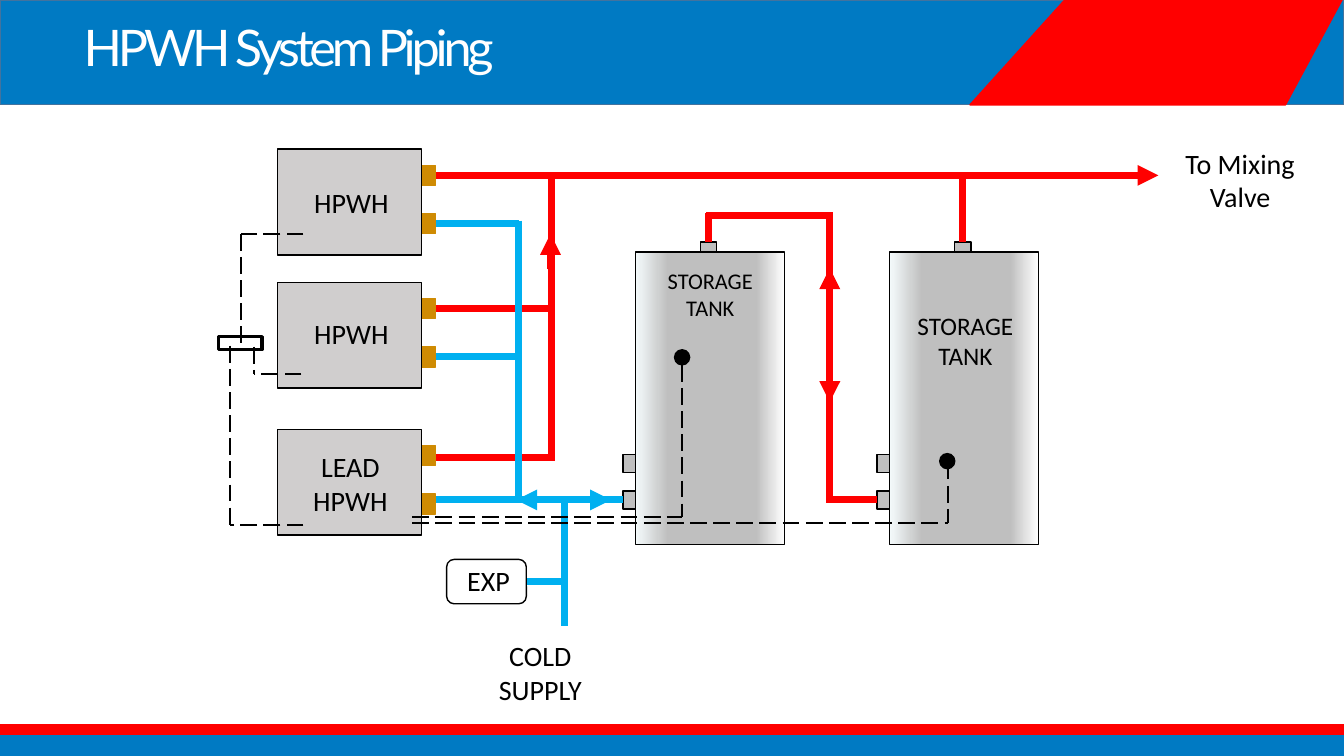
from lxml import etree
from pptx import Presentation
from pptx.dml.color import RGBColor
from pptx.enum.dml import MSO_LINE
from pptx.enum.shapes import MSO_CONNECTOR, MSO_SHAPE
from pptx.enum.text import MSO_ANCHOR, MSO_AUTO_SIZE, PP_ALIGN
from pptx.oxml.ns import qn
from pptx.util import Inches, Pt

RECT, ROUND, OVAL = MSO_SHAPE.RECTANGLE, MSO_SHAPE.ROUNDED_RECTANGLE, MSO_SHAPE.OVAL
STRAIGHT, LONG_DASH = MSO_CONNECTOR.STRAIGHT, MSO_LINE.LONG_DASH
LEFT, CENTER, TOP = PP_ALIGN.LEFT, PP_ALIGN.CENTER, MSO_ANCHOR.TOP
NO_FIT, GROW = MSO_AUTO_SIZE.NONE, MSO_AUTO_SIZE.SHAPE_TO_FIT_TEXT
SIDE_TOP, SIDE_LEFT, SIDE_RIGHT = 0, 1, 3

COLORS = {
    "blue": "007AC3", "edge": "43739E", "red": "FF0000", "cold": "00B0F0",
    "black": "000000", "white": "FFFFFF", "unit": "D0CECE", "port": "CF8B03",
    "steel": "BFBFBF", "shine": "F5FBFC",
}
TANK_STOPS = [(0, "shine"), (22, "steel"), (81, "steel"), (100, "white")]


def color(name):
    return RGBColor.from_string(COLORS[name])


class PipingSlide:
    """Draws the parts of a piping diagram on one slide."""

    def __init__(self, deck):
        self.page = deck.slides.add_slide(deck.slide_layouts[5])
        self.shapes = self.page.shapes

    def finish(self, shape, fill, line, width):
        shape.shadow.inherit = False
        if fill:
            shape.fill.solid()
            shape.fill.fore_color.rgb = color(fill)
        else:
            shape.fill.background()
        shape.line.color.rgb = color(line)
        shape.line.width = Pt(width)
        return shape

    def box(self, x, y, w, h, fill, line="black", width=1, kind=RECT):
        shape = self.shapes.add_shape(kind, Inches(x), Inches(y), Inches(w), Inches(h))
        return self.finish(shape, fill, line, width)

    def ribbon(self, points, fill):
        corners = [(Inches(x), Inches(y)) for x, y in points]
        builder = self.shapes.build_freeform(*corners[0])
        builder.add_line_segments(corners[1:], close=True)
        return self.finish(builder.convert_to_shape(), fill, fill, 1)

    def title(self, text, x, y, w, h):
        title = self.shapes.title
        title.left, title.top, title.width, title.height = map(Inches, (x, y, w, h))
        self.shapes._spTree.append(title._element)
        frame = title.text_frame
        frame.word_wrap, frame.auto_size, frame.vertical_anchor = False, NO_FIT, TOP
        frame.text = text
        para = frame.paragraphs[0]
        para.alignment, para.line_spacing = LEFT, 0.9
        para.font.size, para.font.name = Pt(36), "Lato"
        para.font.color.rgb = color("white")
        para.runs[0].font._element.set("spc", "-300")

    def label(self, text, x, y, w, h, size=20, wrap=False):
        box = self.shapes.add_textbox(Inches(x), Inches(y), Inches(w), Inches(h))
        frame = box.text_frame
        frame.word_wrap, frame.auto_size = wrap, GROW
        frame.text = text
        for para in frame.paragraphs:
            para.alignment = CENTER
            para.font.size, para.font.name = Pt(size), "Calibri"
            para.font.color.rgb = color("black")

    def pipe(self, x1, y1, x2, y2, paint, arrow=False, start=None, end=None, width=5):
        line = self.shapes.add_connector(
            STRAIGHT, Inches(x1), Inches(y1), Inches(x2), Inches(y2))
        if start:
            line.begin_connect(*start)
        if end:
            line.end_connect(*end)
        line.line.color.rgb = color(paint)
        line.line.width = Pt(width)
        if arrow:
            etree.SubElement(line.line._get_or_add_ln(), qn("a:tailEnd"), type="triangle")
        etree.SubElement(line._element.spPr, qn("a:effectLst"))
        return line

    def wire(self, *points):
        for (x1, y1), (x2, y2) in zip(points, points[1:]):
            line = self.pipe(x1, y1, x2, y2, "black", width=1.5)
            line.line.dash_style = LONG_DASH

    def unit(self, y):
        ports = [self.box(4.08, y + offset, 0.24, 0.2, "port", "port")
                 for offset in (0.16, 0.64)]
        self.box(2.75, y, 1.43, 1.05, "unit")
        return ports

    def tank(self, x, outlet_x):
        outlet = self.box(outlet_x, 2.4, 0.16, 0.2, "steel")
        self.box(x - 0.12, 4.51, 0.25, 0.18, "steel")
        inlet = self.box(x - 0.12, 4.87, 0.25, 0.18, "steel")
        body = self.box(x, 2.5, 1.48, 2.9, "steel")
        body.fill.gradient()
        body.fill.gradient_angle = 0
        stops = body._element.spPr.find(qn("a:gradFill")).find(qn("a:gsLst"))
        for stop in list(stops):
            stops.remove(stop)
        for position, name in TANK_STOPS:
            stop = etree.SubElement(stops, qn("a:gs"), pos=str(position * 1000))
            etree.SubElement(stop, qn("a:srgbClr"), val=COLORS[name])
        return outlet, inlet

    def sensor(self, x, y):
        self.box(x, y, 0.15, 0.15, "black", kind=OVAL)


def main():
    deck = Presentation()
    deck.slide_width, deck.slide_height = Inches(13.33), Inches(7.5)
    slide = PipingSlide(deck)

    slide.box(0, 0, 13.33, 1.04, "blue", "edge")
    slide.ribbon([(13.31, 0), (12.75, 1.04), (9.62, 1.04), (10.56, 0)], "red")
    slide.box(0, 7.28, 13.33, 0.22, "blue", "blue")
    slide.box(0, 7.19, 13.33, 0.09, "red", "red")
    slide.title("HPWH System Piping", 0.73, 0.18, 9.15, 0.79)

    first_outlet, first_inlet = slide.tank(6.3, 6.95)
    second_outlet, second_inlet = slide.tank(8.82, 9.47)
    slide.pipe(7.03, 2.4, 7.03, 2.11, "red", start=(first_outlet, SIDE_TOP))
    slide.pipe(8.26, 2.14, 7.0, 2.14, "red")
    slide.pipe(8.23, 4.99, 8.23, 2.11, "red")
    slide.pipe(8.7, 4.96, 8.23, 4.96, "red", start=(second_inlet, SIDE_LEFT))
    slide.pipe(9.55, 2.4, 9.55, 1.73, "red", start=(second_outlet, SIDE_TOP))
    slide.sensor(6.69, 3.47)
    slide.sensor(9.32, 4.5)

    slide.pipe(4.18, 4.54, 5.5, 4.54, "red")
    slide.pipe(4.18, 4.96, 6.18, 4.96, "cold", end=(first_inlet, SIDE_LEFT))
    top_hot, top_cold = slide.unit(1.48)
    middle_hot, middle_cold = slide.unit(2.8)
    slide.unit(4.26)
    slide.pipe(4.32, 1.74, 11.49, 1.74, "red", arrow=True, start=(top_hot, SIDE_RIGHT))
    slide.pipe(4.32, 3.06, 5.47, 3.06, "red", start=(middle_hot, SIDE_RIGHT))
    slide.pipe(5.47, 4.56, 5.47, 1.71, "red")
    slide.pipe(4.32, 2.22, 5.15, 2.22, "cold", start=(top_cold, SIDE_RIGHT))
    slide.pipe(4.32, 3.54, 5.15, 3.54, "cold", start=(middle_cold, SIDE_RIGHT))
    slide.pipe(5.14, 2.19, 5.14, 4.96, "cold")
    slide.pipe(5.6, 4.96, 5.6, 6.21, "cold")
    slide.pipe(5.07, 5.77, 5.59, 5.77, "cold")
    slide.box(4.43, 5.55, 0.79, 0.44, "white", kind=ROUND)

    for x1, y1, x2, y2, paint in [
        (5.46, 2.67, 5.46, 2.32, "red"),
        (8.23, 3.01, 8.23, 2.66, "red"),
        (8.23, 3.64, 8.23, 3.99, "red"),
        (5.51, 4.96, 5.12, 4.96, "cold"),
        (5.67, 4.96, 6.06, 4.96, "cold"),
    ]:
        slide.pipe(x1, y1, x2, y2, paint, arrow=True)

    slide.wire((4.09, 5.19), (9.4, 5.19))
    slide.wire((9.4, 4.59), (9.4, 5.19))
    slide.wire((4.09, 5.13), (6.76, 5.13))
    slide.wire((6.76, 3.62), (6.76, 5.13))
    slide.wire((3.01, 2.32), (2.39, 2.32), (2.39, 3.42))
    slide.wire((3.01, 5.21), (2.28, 5.21))
    slide.wire((2.28, 3.43), (2.28, 5.21))
    slide.wire((2.99, 3.71), (2.52, 3.71))
    slide.wire((2.52, 3.44), (2.52, 3.71))
    slide.box(2.17, 3.34, 0.43, 0.13, None, width=2.25)

    slide.label("HPWH", 3.01, 1.79, 0.95, 0.44)
    slide.label("HPWH", 3.01, 3.09, 0.95, 0.44)
    slide.label("LEAD\nHPWH", 3, 4.41, 0.95, 0.77)
    slide.label("EXP", 4.53, 5.54, 0.63, 0.44)
    slide.label("COLD\nSUPPLY", 4.83, 6.29, 1.06, 0.77)
    slide.label("STORAGE\nTANK", 6.51, 2.6, 1.07, 0.64, size=16)
    slide.label("STORAGE\nTANK", 8.99, 3.03, 1.17, 0.71, size=18)
    slide.label("To Mixing\nValve", 11.27, 1.4, 2.06, 0.77, wrap=True)
    deck.save("out.pptx")


if __name__ == "__main__":
    main()
